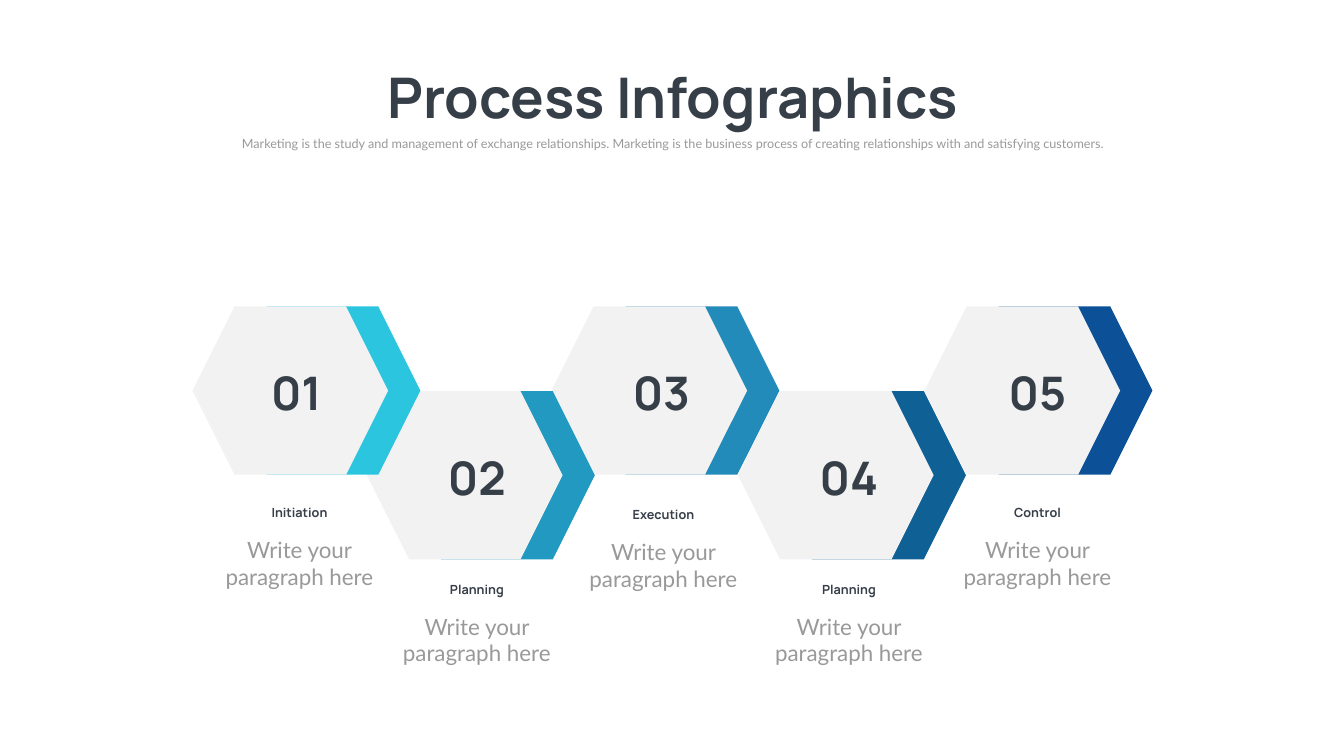
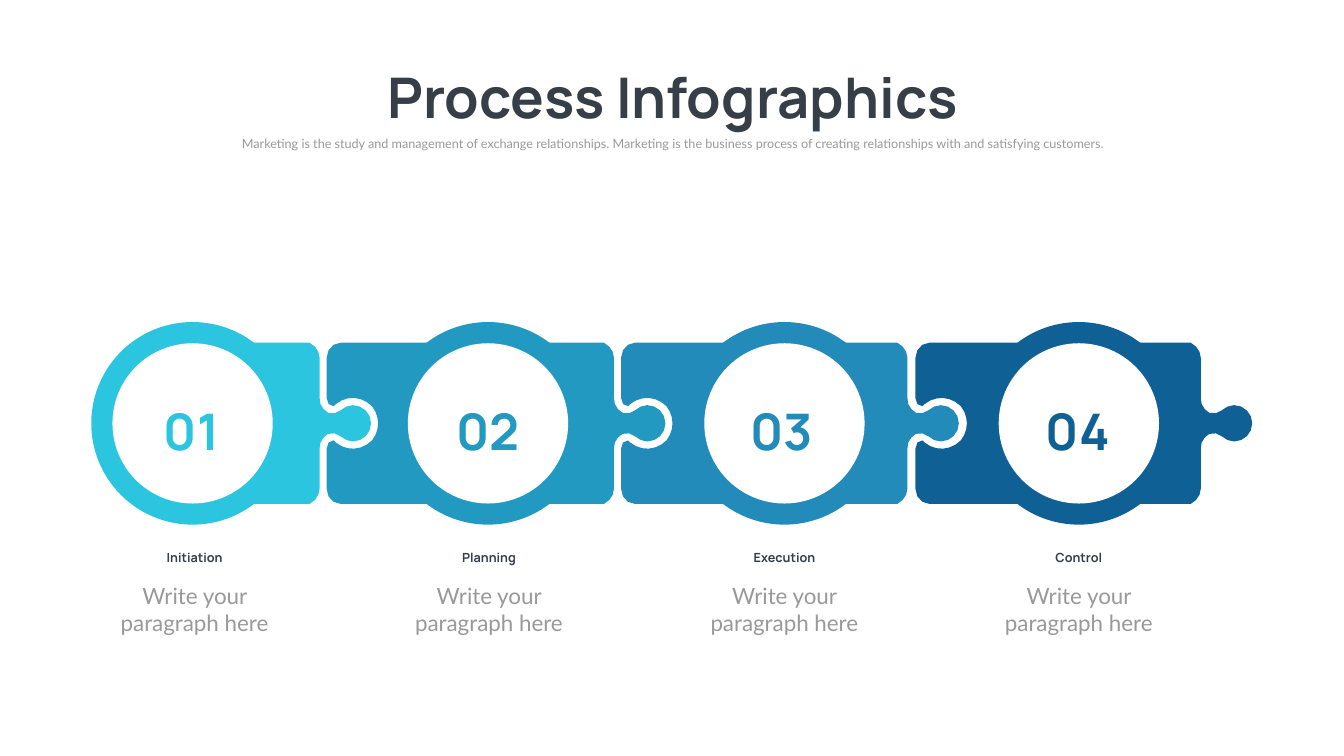
import math

from pptx import Presentation
from pptx.dml.color import RGBColor
from pptx.enum import shapes, text
from pptx.util import Inches, Pt

# Shared colours, text styles and wording
COLORS = {
    "ink": "363E48", "grey": "999999", "pale": "F2F2F2", "white": "FFFFFF",
    "cyan": "2BC5E0", "teal": "2299C0", "blue": "228BB9",
    "deep": "0F6195", "navy": "0C5198",
}
STYLES = {
    "title": {"name": "Manrope", "size": Pt(40), "bold": True},
    "body": {"name": "Lato", "size": Pt(16), "bold": False},
    "small": {"name": "Lato", "size": Pt(9), "bold": False},
    "heading": {"name": "Manrope", "size": Pt(9), "bold": True},
    "hexagon number": {"name": "Manrope", "size": Pt(33), "bold": True},
    "puzzle number": {"name": "Manrope", "size": Pt(36), "bold": True},
}
TITLE = "Process Infographics"
SUBTITLE = ("Marketing is the study and management of exchange relationships. "
            "Marketing is the business process of creating relationships with "
            "and satisfying customers.")
PARAGRAPH = "Write your paragraph here"


def write(shape, words, center, top, width, height, style, color):
    """Place a text shape around a centre line and fill it with styled words."""
    box = {"left": center - width / 2, "top": top, "width": width, "height": height}
    for side, length in box.items():
        setattr(shape, side, Inches(length))
    frame = shape.text_frame
    frame.text = words
    layout = {"word_wrap": True, "auto_size": text.MSO_AUTO_SIZE.NONE,
              "vertical_anchor": text.MSO_ANCHOR.TOP}
    for attribute, value in layout.items():
        setattr(frame, attribute, value)
    line = frame.paragraphs[0]
    line.alignment = text.PP_ALIGN.CENTER
    line.space_before = Pt(0)
    font = line.runs[0].font
    for attribute, value in STYLES[style].items():
        setattr(font, attribute, value)
    font.color.rgb = RGBColor.from_string(COLORS[color])


def paint(shape, color):
    """Give a shape a flat fill without outline or shadow."""
    shape.fill.solid()
    shape.fill.fore_color.rgb = RGBColor.from_string(COLORS[color])
    shape.line.fill.background()
    shape.shadow.inherit = False


prs = Presentation()
prs.slide_width, prs.slide_height = Inches(13.33), Inches(7.5)

# Title and subtitle on both slides
hexagon_slide, puzzle_slide = [prs.slides.add_slide(prs.slide_layouts[0]) for _ in range(2)]
for slide in prs.slides:
    write(slide.shapes.title, TITLE, 6.67, 0.57, 6.16, 1.45, "title", "ink")
    write(slide.placeholders[1], SUBTITLE, 6.67, 1.3, 10.41, 0.25, "small", "grey")

# Hexagon steps: left, top, number centre, text centre, text top, heading, colour
hexagon_steps = [
    (1.91, 3.04, 2.94, 2.97, 4.96, "Initiation", "cyan"),
    (3.64, 3.88, 4.73, 4.73, 5.72, "Planning", "teal"),
    (5.47, 3.04, 6.56, 6.58, 4.98, "Execution", "blue"),
    (7.32, 3.88, 8.42, 8.42, 5.72, "Planning", "deep"),
    (9.17, 3.04, 10.29, 10.29, 4.96, "Control", "navy"),
]

# Each step overlaps the one to its right
for left, top, *_, color in reversed(hexagon_steps):
    for offset, fill in ((0.32, color), (0, "pale")):
        hexagon = hexagon_slide.shapes.add_shape(
            shapes.MSO_SHAPE.HEXAGON, Inches(left + offset), Inches(top),
            Inches(1.94), Inches(1.67))
        paint(hexagon, fill)

for number, step in enumerate(hexagon_steps, 1):
    left, top, number_center, text_center, text_top, heading, color = step
    for words, center, y, width, height, style, ink in (
        (f"{number:02}", number_center, top + 0.53, 0.94, 0.66, "hexagon number", "ink"),
        (heading, text_center, text_top, 1.33, 0.25, "heading", "ink"),
        (PARAGRAPH, text_center, text_top + 0.31, 1.9, 0.64, "body", "grey"),
    ):
        label = hexagon_slide.shapes.add_textbox(0, 0, 0, 0)
        write(label, words, center, y, width, height, style, ink)

# Upper halves of the puzzle edges as Bézier chains: a start, then three points
# per curve, measured from the edge and from the horizontal middle line
edge_curves = {
    "tab": [(-0.1, -0.8), (-0.04, -0.77), (0, -0.71), (0, -0.65),
            (0, -0.65), (0, -0.25), (0, -0.25),
            (0, -0.21), (0.01, -0.17), (0.04, -0.14),
            (0.06, -0.11), (0.1, -0.09), (0.15, -0.1),
            (0.18, -0.11), (0.2, -0.12), (0.21, -0.13),
            (0.24, -0.16), (0.29, -0.18), (0.33, -0.18),
            (0.43, -0.18), (0.51, -0.1), (0.51, 0)],
    "socket": [(0.14, -0.8), (0.06, -0.8), (0, -0.73), (0, -0.65),
               (0, -0.65), (0, -0.25), (0, -0.25),
               (0, -0.23), (0.01, -0.21), (0.02, -0.19),
               (0.04, -0.17), (0.05, -0.17), (0.07, -0.17),
               (0.08, -0.18), (0.09, -0.18), (0.09, -0.19),
               (0.2, -0.28), (0.35, -0.27), (0.45, -0.17),
               (0.49, -0.12), (0.51, -0.06), (0.51, 0)],
}
CHORD = 0.07
edges = {"flat": [(0, -0.8), (0, 0.8)]}
for kind, chain in edge_curves.items():
    half = [chain[0]]
    for first in range(0, len(chain) - 1, 3):
        controls = chain[first:first + 4]
        straight = controls[0] == controls[1]
        steps = 1 if straight else math.ceil(math.dist(controls[0], controls[3]) / CHORD)
        for t in [n / steps for n in range(1, steps + 1)]:
            weights = ((1 - t) ** 3, 3 * t * (1 - t) ** 2, 3 * t * t * (1 - t), t ** 3)
            half.append(tuple(sum(w * point[axis] for w, point in zip(weights, controls))
                              for axis in (0, 1)))
    edges[kind] = half + [(x, -y) for x, y in reversed(half[:-1])]

# Puzzle steps: left edge, its kind, right edge, disc, number and text centres
MIDDLE = 4.2
puzzle_steps = [
    (2.03, "flat", 3.17, 1.91, 1.9, 1.93, "Initiation", "cyan"),
    (3.24, "socket", 6.09, 4.84, 4.84, 4.85, "Planning", "teal"),
    (6.16, "socket", 9, 7.78, 7.75, 7.78, "Execution", "blue"),
    (9.08, "socket", 11.91, 10.7, 10.69, 10.7, "Control", "deep"),
]
for number, step in enumerate(puzzle_steps, 1):
    left, left_kind, right, disc_center, number_center, text_center, heading, color = step

    # Piece with a tab on its right side
    outline = [(right + x, MIDDLE + y) for x, y in edges["tab"]]
    outline += [(left + x, MIDDLE + y) for x, y in reversed(edges[left_kind])]
    points = [(Inches(x), Inches(y)) for x, y in outline]
    builder = puzzle_slide.shapes.build_freeform(*points[0])
    builder.add_line_segments(points[1:], close=True)
    paint(builder.convert_to_shape(), color)

    # Ring
    for diameter, fill in ((2.01, color), (1.59, "white")):
        disc = puzzle_slide.shapes.add_shape(
            shapes.MSO_SHAPE.OVAL, Inches(disc_center - diameter / 2),
            Inches(MIDDLE - diameter / 2), Inches(diameter), Inches(diameter))
        paint(disc, fill)

    # Number and texts
    for words, center, y, width, height, style, ink in (
        (f"{number:02}", number_center, 3.92, 0.94, 0.71, "puzzle number", color),
        (heading, text_center, 5.41, 1.68, 0.25, "heading", "ink"),
        (PARAGRAPH, text_center, 5.73, 1.69, 0.64, "body", "grey"),
    ):
        label = puzzle_slide.shapes.add_textbox(0, 0, 0, 0)
        write(label, words, center, y, width, height, style, ink)

prs.save("out.pptx")
